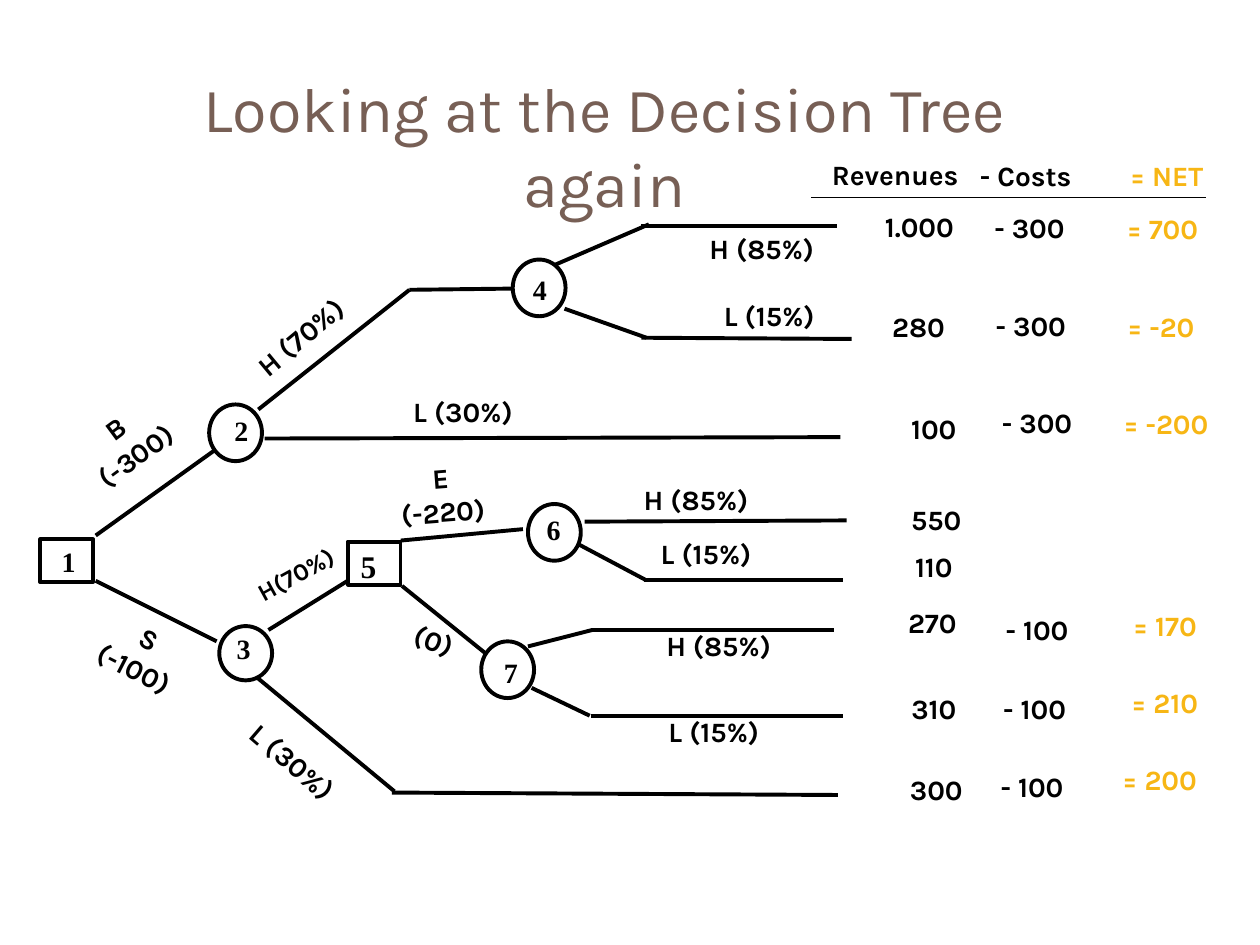
from lxml.etree import SubElement
from pptx import Presentation
from pptx.dml.color import RGBColor
from pptx.enum.shapes import MSO_CONNECTOR as Connector, MSO_SHAPE as Shape
from pptx.enum.text import MSO_ANCHOR as Anchor, MSO_AUTO_SIZE as AutoSize, PP_ALIGN as Align
from pptx.oxml.ns import qn
from pptx.util import Pt

BLACK = RGBColor(0, 0, 0)
WHITE = RGBColor(255, 255, 255)
BROWN = RGBColor(0x77, 0x5F, 0x55)
GOLD = RGBColor(0xF7, 0xB6, 0x15)
SANS, SERIF = "Karla", "Times New Roman"

TITLE = "Looking at the Decision Tree again"

# Nodes: number, shape, left, top, height, label left, label top, label size
NODE_WIDTH = 30.2
NODES = [
    ("1", Shape.RECTANGLE, 23, 308.2, 24.5, 25.9, 307.4, 16),
    ("2", Shape.OVAL, 119.5, 231.1, 32.4, 124.6, 232.6, 16),
    ("3", Shape.OVAL, 125.3, 357.8, 31, 126, 357.1, 16),
    ("4", Shape.OVAL, 293, 148.3, 32.4, 295.2, 151.9, 16),
    ("5", Shape.RECTANGLE, 198.7, 309.6, 24.5, 197.3, 308.9, 18),
    ("6", Shape.OVAL, 301.7, 288, 32.4, 303.1, 289.4, 16),
    ("7", Shape.OVAL, 275, 366.5, 32.4, 278.6, 370.8, 16),
]

# Branch segments: x1, y1, x2, y2
BRANCHES = [
    # from node 1
    (54.7, 306, 123.1, 257), (54.7, 331.9, 123.8, 366.5),
    # from node 2
    (147.6, 234, 234, 165.6), (234, 165.6, 294.5, 164.9), (151.2, 250.6, 480.2, 249.8),
    # from node 3
    (153.4, 360, 198.7, 331.9), (146.2, 386.6, 225.4, 452.2), (223.9, 452.9, 478.8, 454.3),
    # from node 4
    (317.5, 151.2, 370.8, 128.2), (366.5, 128.9, 478.1, 128.9),
    (322.6, 176.4, 369.4, 193), (366.5, 193, 486.7, 193.7),
    # from node 5
    (229, 308.9, 298.8, 302.4), (229.7, 334.8, 277.9, 373.7),
    # from node 6
    (334.1, 298.1, 483.8, 297.4), (330.5, 311, 368.6, 331.2), (367.9, 331.2, 481.7, 331.2),
    # from node 7
    (301.7, 369.4, 338.4, 360), (337.7, 360, 476.6, 360),
    (303.8, 393.1, 337, 409), (337.7, 409, 481.7, 409),
]

# Branch labels: text, left, top, width, rotation, size
BRANCH_LABELS = [
    ("B\n(-300)", 16.6, 229.7, 110.2, 323.5, 16),
    ("S\n(-100)", 25.9, 350.6, 110.2, 27.1, 16),
    ("H (70%)", 116.6, 179.3, 110.2, 320.3, 16),
    ("L (30%)", 215.3, 221.8, 98.6, 0, 16),
    ("H(70%)", 113.8, 316.1, 110.2, 331.1, 14),
    ("L (30%)", 118.1, 421.9, 98.6, 40.7, 16),
    ("H (85%)", 380.2, 128.9, 110.2, 359.8, 16),
    ("L (15%)", 384.5, 167, 110.2, 0.2, 16),
    ("E\n(-220)", 197.3, 259.9, 110.2, 355.6, 16),
    ("(0)", 198.7, 352.8, 98.6, 21.3, 16),
    ("H (85%)", 348.5, 272.2, 98.6, 0, 16),
    ("L (15%)", 354.2, 303.1, 98.6, 0, 16),
    ("H (85%)", 361.4, 355.7, 98.6, 0, 16),
    ("L (15%)", 358.6, 404.6, 98.6, 0, 16),
]

# Outcome columns: text, left, top, width
CENTRED_FIGURES = [
    ("Revenues", 460.8, 86.4, 101.5), ("- Costs", 550.1, 87.1, 72), ("= NET", 630.7, 87.1, 72),
    ("100", 502.6, 231.8, 62), ("550", 504, 283.7, 62), ("110", 502.6, 310.3, 62),
    ("270", 501.8, 342.7, 62), ("310", 502.6, 391.7, 62), ("300", 504, 437.8, 62),
    ("- 100", 561.6, 346.3, 62), ("- 100", 560.2, 391.7, 62), ("- 100", 558.7, 436.3, 62),
]
RIGHT_FIGURES = [
    ("1.000", 465.8, 118.8, 80), ("280", 489.6, 176.4, 51),
    ("- 300", 548.6, 119.5, 60.5), ("- 300", 563.8, 175.7, 46), ("- 300", 563, 231.1, 50.4),
    ("= 700", 634.3, 120.2, 51), ("= -20", 632.2, 176.4, 51), ("= -200", 614.9, 231.8, 76.3),
    ("= 170", 633.6, 347, 51), ("= 210", 634.3, 391, 51), ("= 200", 633.6, 434.9, 51),
]
HEADER_RULE = (463.7, 113, 689, 113)


def write(box, text, size, color, font, align=Align.CENTER, inset=(7.2, 3.6), bold=True):
    frame = box.text_frame
    frame.word_wrap = True
    frame.auto_size = AutoSize.NONE
    frame.vertical_anchor = Anchor.TOP
    frame.margin_left = frame.margin_right = Pt(inset[0])
    frame.margin_top = frame.margin_bottom = Pt(inset[1])
    frame.text = text
    for para in frame.paragraphs:
        para.alignment = align
        para.font.size = Pt(size)
        para.font.name = font
        para.font.bold = bold
        para.font.color.rgb = color


def add_label(page, text, left, top, width, size=16, font=SANS, rotation=0, **style):
    lines = text.count("\n") + 1
    height = lines * size * 1.2 + 7.2
    box = page.shapes.add_textbox(Pt(left), Pt(top), Pt(width), Pt(height))
    box.rotation = rotation
    color = GOLD if text.startswith("=") else BLACK
    write(box, text, size, color, font, **style)


def add_line(page, ends, weight):
    line = page.shapes.add_connector(Connector.STRAIGHT, *map(Pt, ends))
    line.line.color.rgb = BLACK
    line.line.width = Pt(weight)
    SubElement(line._element.spPr, qn("a:effectLst"))


def add_node(page, kind, left, top, height):
    node = page.shapes.add_shape(kind, Pt(left), Pt(top), Pt(NODE_WIDTH), Pt(height))
    node.shadow.inherit = False
    node.fill.solid()
    node.fill.fore_color.rgb = WHITE
    node.line.color.rgb = BLACK
    node.line.width = Pt(2.25)


def main():
    deck = Presentation()
    deck.slide_width, deck.slide_height = Pt(720), Pt(540)
    page = deck.slides.add_slide(deck.slide_layouts[5])

    # Title
    title = page.shapes.title
    title.left, title.top, title.width, title.height = Pt(59), Pt(36), Pt(573), Pt(50.4)
    write(title, TITLE, 36, BROWN, SANS, bold=False)

    # Tree
    for ends in BRANCHES:
        add_line(page, ends, 2.25)
    for number, kind, left, top, height, label_left, label_top, size in NODES:
        add_node(page, kind, left, top, height)
        add_label(page, number, label_left, label_top, 26.6, size, SERIF)
    for text, left, top, width, rotation, size in BRANCH_LABELS:
        add_label(page, text, left, top, width, size, rotation=rotation)

    # Outcomes
    for figure in CENTRED_FIGURES:
        add_label(page, *figure)
    for figure in RIGHT_FIGURES:
        add_label(page, *figure, align=Align.RIGHT, inset=(0.7, 0.7))
    add_line(page, HEADER_RULE, 0.75)

    deck.save("out.pptx")


if __name__ == "__main__":
    main()
